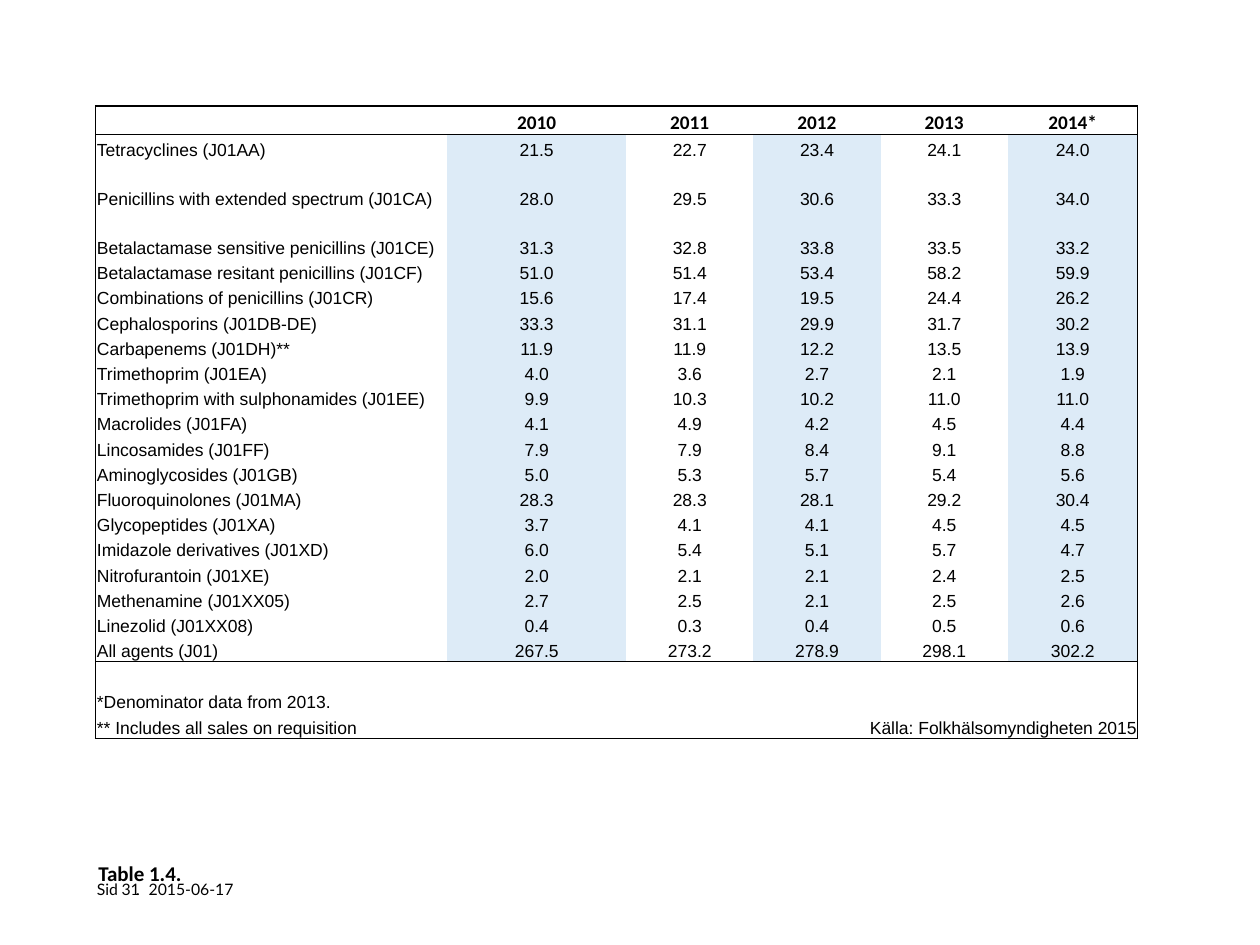
from typing import NamedTuple

from lxml import etree
from pptx import Presentation
from pptx import util as u
from pptx.dml.color import RGBColor
from pptx.enum import text as t
from pptx.oxml import ns

BLACK = RGBColor(0, 0, 0)
BLUE = RGBColor(0xDD, 0xEB, 0xF7)
PLAIN = "{2D5ABB26-0587-4C30-8999-92F81FD0307C}"
WIDE, HIGH = u.Inches(10), u.Inches(7.5)
COLS = [2.79, 1.42, 1.01, 1.01, 1.01, 1.03]
ROWS = [0.23, 0.2, 0.39, 0.39] + [0.2] * 18 + [0.21]
LEFT, MID, RIGHT = t.PP_ALIGN.LEFT, t.PP_ALIGN.CENTER, t.PP_ALIGN.RIGHT
LOW, TOP = t.MSO_ANCHOR.BOTTOM, t.MSO_ANCHOR.TOP
YEARS = ["", "2010", "2011", "2012", "2013", "2014*"]
SALES = [
    ("Tetracyclines (J01AA)", 21.5, 22.7, 23.4, 24.1, 24.0),
    ("Penicillins with extended spectrum (J01CA)", 28.0, 29.5, 30.6, 33.3, 34.0),
    ("Betalactamase sensitive penicillins (J01CE)", 31.3, 32.8, 33.8, 33.5, 33.2),
    ("Betalactamase resitant penicillins (J01CF)", 51.0, 51.4, 53.4, 58.2, 59.9),
    ("Combinations of penicillins (J01CR)", 15.6, 17.4, 19.5, 24.4, 26.2),
    ("Cephalosporins (J01DB-DE)", 33.3, 31.1, 29.9, 31.7, 30.2),
    ("Carbapenems (J01DH)**", 11.9, 11.9, 12.2, 13.5, 13.9),
    ("Trimethoprim (J01EA)", 4.0, 3.6, 2.7, 2.1, 1.9),
    ("Trimethoprim with sulphonamides (J01EE)", 9.9, 10.3, 10.2, 11.0, 11.0),
    ("Macrolides (J01FA)", 4.1, 4.9, 4.2, 4.5, 4.4),
    ("Lincosamides (J01FF)", 7.9, 7.9, 8.4, 9.1, 8.8),
    ("Aminoglycosides (J01GB)", 5.0, 5.3, 5.7, 5.4, 5.6),
    ("Fluoroquinolones (J01MA)", 28.3, 28.3, 28.1, 29.2, 30.4),
    ("Glycopeptides (J01XA)", 3.7, 4.1, 4.1, 4.5, 4.5),
    ("Imidazole derivatives (J01XD)", 6.0, 5.4, 5.1, 5.7, 4.7),
    ("Nitrofurantoin (J01XE)", 2.0, 2.1, 2.1, 2.4, 2.5),
    ("Methenamine (J01XX05)", 2.7, 2.5, 2.1, 2.5, 2.6),
    ("Linezolid (J01XX08)", 0.4, 0.3, 0.4, 0.5, 0.6),
    ("All agents (J01)", 267.5, 273.2, 278.9, 298.1, 302.2),
]
NOTES = [
    [""] * 6,
    ["*Denominator data from 2013."] + [""] * 5,
    ["** Includes all sales on requisition", "", "",
     "Källa: Folkhälsomyndigheten 2015", "", ""],
]


class Label(NamedTuple):
    """A footer text, placed in shares of the slide."""
    words: str
    x: float
    y: float
    w: float
    h: float
    align: t.PP_ALIGN = LEFT
    anchor: t.MSO_ANCHOR = LOW
    pad: tuple = (0, 0)
    wrap: bool = True


FOOTER = [
    Label(".", 0.102, 0.924, 0.016, 0.033, anchor=TOP, pad=(0.1, 0.05)),
    Label("Sid", 0.077, 0.931, 0.017, 0.02, anchor=TOP, wrap=False),
    Label("31", 0.078, 0.924, 0.033, 0.027, RIGHT),
    Label("2015-06-17", 0.118, 0.924, 0.086, 0.027),
]


def write(frame, words: str, *, face: str, size: float, bold: bool = False,
          align: t.PP_ALIGN = LEFT, lead: float | None = None) -> None:
    """Put one formatted paragraph in a text frame."""
    para = frame.paragraphs[0]
    para.alignment = align
    if lead:
        para.line_spacing = u.Pt(lead)
    if not words:
        etree.SubElement(para._p, ns.qn("a:endParaRPr"), sz=str(int(size * 100)))
        return
    run = para.add_run()
    run.text = words
    font = run.font
    font.name, font.size, font.bold = face, u.Pt(size), bold
    font.color.rgb = BLACK


def place(shape, x: float, y: float, w: float, h: float) -> None:
    """Set a shape's box in shares of the slide."""
    shape.left, shape.top = int(x * WIDE), int(y * HIGH)
    shape.width, shape.height = int(w * WIDE), int(h * HIGH)


def inset(frame, x: float = 0, y: float = 0) -> None:
    """Set the side and end margins of a text frame."""
    frame.margin_left = frame.margin_right = u.Inches(x)
    frame.margin_top = frame.margin_bottom = u.Inches(y)


def edge(cell, sides: dict[str, float]) -> None:
    """Draw cell borders from widths in points, zero for none."""
    props = cell._tc.get_or_add_tcPr()
    for side in "LRTB":
        width = sides.get(side, 0)
        line = etree.SubElement(props, ns.qn(f"a:ln{side}"), w=str(int(width * 12700)))
        if width:
            fill = etree.SubElement(line, ns.qn("a:solidFill"))
            etree.SubElement(fill, ns.qn("a:srgbClr"), val=str(BLACK))
        else:
            etree.SubElement(line, ns.qn("a:noFill"))


def sides(row: int, col: int) -> dict[str, float]:
    """Give the border widths for a place in the grid."""
    last, body = len(ROWS) - 1, len(SALES)
    side = 0.5 if 1 <= row <= body else 1
    out = {}
    if col == 0:
        out["L"] = side
    if col == len(COLS) - 1 or (row == last and col == 3):
        out["R"] = side
    if row in (0, 1, body + 1):
        out["T"] = 1 if row == 0 else 0.5
    if row in (0, body, last):
        out["B"] = 1 if row == last else 0.5
    return out


def grid(slide) -> None:
    """Build the sales table."""
    cells = [YEARS]
    cells += [[name, *(f"{val:.1f}" for val in vals)] for name, *vals in SALES]
    cells += NOTES
    table = slide.shapes.add_table(
        len(ROWS), len(COLS), u.Inches(0.76), u.Inches(0.84),
        u.Inches(sum(COLS)), u.Inches(sum(ROWS))).table
    table.first_row = table.horz_banding = False
    table._tbl.tblPr.find(ns.qn("a:tableStyleId")).text = PLAIN
    for col, wide in zip(table.columns, COLS):
        col.width = u.Inches(wide)
    for row, high in zip(table.rows, ROWS):
        row.height = u.Inches(high)
    for r, line in enumerate(cells):
        body = 1 <= r <= len(SALES)
        for c, words in enumerate(line):
            cell = table.cell(r, c)
            cell.vertical_anchor = LOW
            inset(cell, 0.01)
            cell.margin_top = u.Inches(0.01)
            edge(cell, sides(r, c))
            if body and c % 2:
                cell.fill.solid()
                cell.fill.fore_color.rgb = BLUE
            else:
                cell.fill.background()
            align = LEFT if c == 0 else MID if r <= len(SALES) else RIGHT
            head = r == 0
            write(cell.text_frame, words, face="Calibri" if head else "Arial",
                  size=11 if head else 10, bold=head, align=align)
    end = len(ROWS) - 1
    table.cell(end, 3).merge(table.cell(end, 5))


def note(slide, label: Label) -> None:
    """Add one footer text."""
    box = slide.shapes.add_textbox(0, 0, 0, 0)
    place(box, label.x, label.y, label.w, label.h)
    frame = box.text_frame
    frame.word_wrap, frame.vertical_anchor = label.wrap, label.anchor
    inset(frame, *label.pad)
    write(frame, label.words, face="Lato", size=9, align=label.align)


def main() -> None:
    """Build and save the slide."""
    deck = Presentation()
    deck.slide_width, deck.slide_height = WIDE, HIGH
    slide = deck.slides.add_slide(deck.slide_layouts[5])
    for label in FOOTER:
        note(slide, label)
    title = slide.shapes.title
    place(title, 0.078, 0.877, 0.32, 0.06)
    frame = title.text_frame
    frame.vertical_anchor = LOW
    inset(frame)
    write(frame, "Table 1.4.", face="Calibri", size=12, bold=True, lead=34)
    grid(slide)
    deck.save("out.pptx")


if __name__ == "__main__":
    main()
